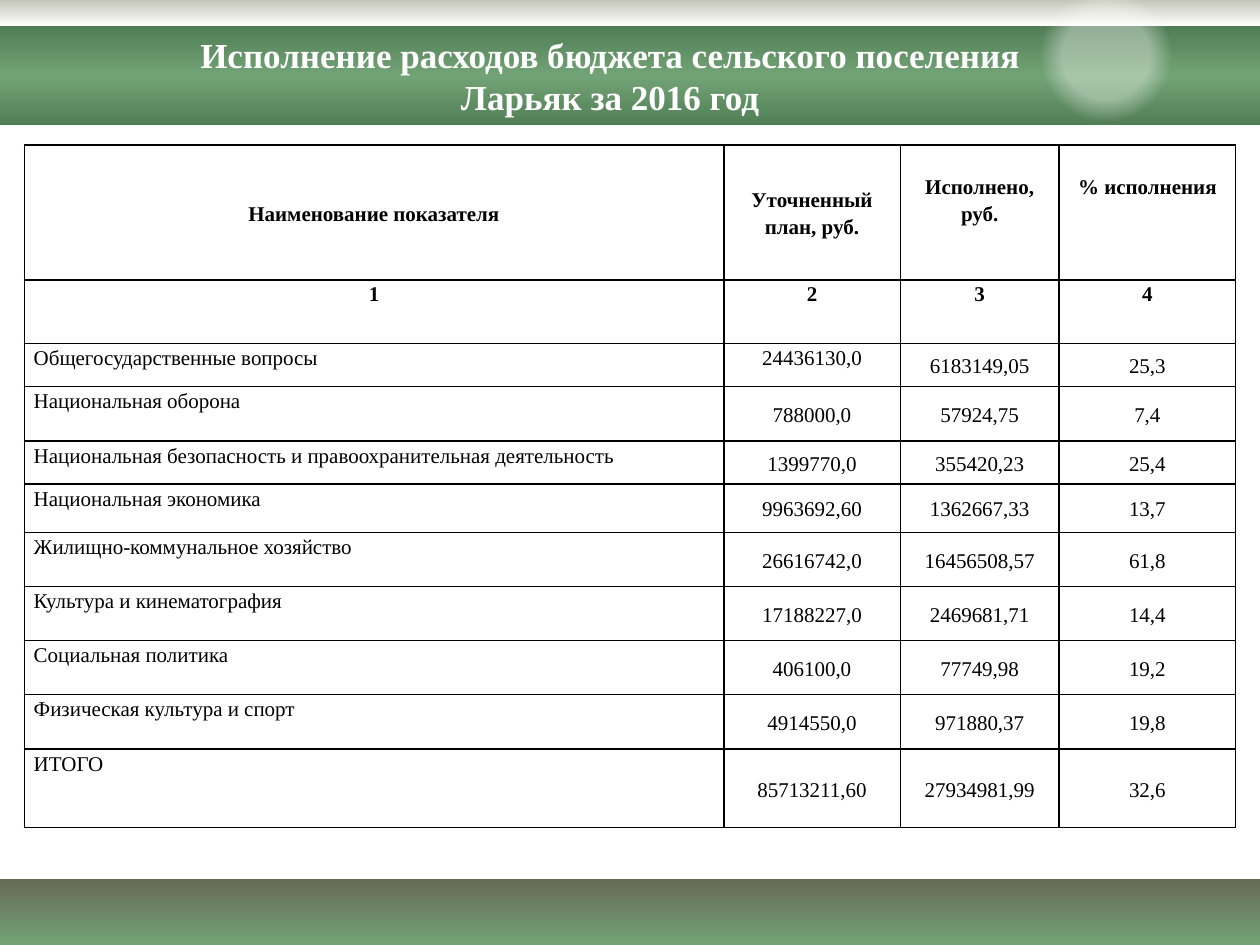
from pptx import Presentation
from pptx.dml.color import RGBColor
from pptx.enum.shapes import MSO_SHAPE
from pptx.enum.text import MSO_ANCHOR, PP_ALIGN
from pptx.oxml import parse_xml
from pptx.oxml.ns import nsdecls, qn
from pptx.util import Cm, Pt

FONT = "Times New Roman"
BLACK = RGBColor(0x00, 0x00, 0x00)
WHITE = RGBColor(0xFF, 0xFF, 0xFF)
OLIVE = RGBColor(0x67, 0x6A, 0x55)
GREEN = RGBColor(0x72, 0xA3, 0x76)
DARK_GREEN = RGBColor(0x52, 0x7E, 0x56)
STONE = RGBColor(0xC4, 0xC6, 0xB8)

WIDTH, HEIGHT = 25.4, 19.05
COLUMNS = [14.1, 3.56, 3.2, 3.56]
ROWS = [2.72, 1.28, 0.87, 1.1, 0.87, 0.97, 1.09, 1.09, 1.09, 1.1, 1.58]
DATA = [
    ["Наименование показателя", "Уточненный план, руб.", "Исполнено,\nруб.", "% исполнения"],
    ["1", "2", "3", "4"],
    ["Общегосударственные вопросы", "24436130,0", "6183149,05", "25,3"],
    ["Национальная оборона", "788000,0", "57924,75", "7,4"],
    ["Национальная безопасность и правоохранительная деятельность",
     "1399770,0", "355420,23", "25,4"],
    ["Национальная экономика", "9963692,60", "1362667,33", "13,7"],
    ["Жилищно-коммунальное хозяйство", "26616742,0", "16456508,57", "61,8"],
    ["Культура и кинематография", "17188227,0", "2469681,71", "14,4"],
    ["Социальная политика", "406100,0", "77749,98", "19,2"],
    ["Физическая культура и спорт", "4914550,0", "971880,37", "19,8"],
    ["ИТОГО", "85713211,60", "27934981,99", "32,6"],
]
HEADER_ROWS = 2
# Cells outside the first column that keep their text at the top
TOP_CELLS = {(0, 2), (0, 3), (1, 1), (1, 2), (1, 3), (2, 1)}


def write(tf, text, size=12, color=BLACK, bold=False, align=PP_ALIGN.CENTER, spacing=None):
    for i, line in enumerate(text.split("\n")):
        p = tf.paragraphs[0] if i == 0 else tf.add_paragraph()
        p.alignment = align
        p.line_spacing = spacing
        r = p.add_run()
        r.text = line
        r.font.name, r.font.size, r.font.bold = FONT, Pt(size), bold
        r.font.color.rgb = color


def gradient_shape(s, kind, box, stops, radial=False):
    """Add a borderless shape; stops are (percent, colour, opacity percent)."""
    sp = s.shapes.add_shape(kind, *[Cm(v) for v in box])
    sp.shadow.inherit = False
    sp.line.fill.background()
    sp.fill.gradient()
    gs = "".join(
        f'<a:gs pos="{pos * 1000}"><a:srgbClr val="{color}">'
        f'<a:alpha val="{alpha * 1000}"/></a:srgbClr></a:gs>'
        for pos, color, alpha in stops)
    if radial:
        direction = ('<a:path path="circle"><a:fillToRect l="50000" t="50000" '
                     'r="50000" b="50000"/></a:path>')
    else:
        direction = '<a:lin ang="5400000" scaled="0"/>'
    fill = parse_xml(f'<a:gradFill {nsdecls("a")} rotWithShape="1">'
                     f'<a:gsLst>{gs}</a:gsLst>{direction}</a:gradFill>')
    spPr = sp.element.spPr
    spPr.replace(spPr.find(qn("a:gradFill")), fill)


def add_header(s, x, y, w, h):
    # Light strip, green band and glow
    strip = 0.53
    gradient_shape(s, MSO_SHAPE.RECTANGLE, (x, y, w, strip),
                   [(0, STONE, 100), (100, WHITE, 100)])
    gradient_shape(s, MSO_SHAPE.RECTANGLE, (x, y + strip, w, h - strip),
                   [(0, DARK_GREEN, 100), (50, GREEN, 100), (100, DARK_GREEN, 100)])
    gradient_shape(s, MSO_SHAPE.OVAL, (x + 20.9, y - 0.28, 2.8, 2.8),
                   [(44, WHITE, 38), (67, WHITE, 0)], radial=True)
    # Title, brought in front of the band
    title = s.shapes.title
    s.shapes.element.append(title.element)
    title.left, title.top = Cm(x + 3.3), Cm(y + strip)
    title.width, title.height = Cm(18), Cm(1.97)
    tf = title.text_frame
    tf.word_wrap = True
    tf.vertical_anchor = MSO_ANCHOR.MIDDLE
    write(tf, "Исполнение расходов бюджета сельского поселения Ларьяк за 2016 год",
          size=20, color=WHITE, bold=True)


def add_borders(cell):
    tcPr = cell._tc.get_or_add_tcPr()
    for i, side in enumerate(("lnL", "lnR", "lnT", "lnB")):
        tcPr.insert(i, parse_xml(
            f'<a:{side} {nsdecls("a")} w="12700"><a:solidFill>'
            f'<a:srgbClr val="{BLACK}"/></a:solidFill></a:{side}>'))


def add_budget_table(s, x, y, w, h):
    table = s.shapes.add_table(len(ROWS), len(COLUMNS), Cm(x), Cm(y), Cm(w), Cm(h)).table
    table.first_row = table.horz_banding = False
    for column, width in zip(table.columns, COLUMNS):
        column.width = Cm(width)
    for row, height in zip(table.rows, ROWS):
        row.height = Cm(height)
    for i, values in enumerate(DATA):
        header = i < HEADER_ROWS
        for j, text in enumerate(values):
            cell = table.cell(i, j)
            cell.fill.background()
            cell.margin_left = cell.margin_right = Cm(0.19)
            cell.margin_top = cell.margin_bottom = 0
            at_top = (i, j) in TOP_CELLS or (j == 0 and i > 0)
            cell.vertical_anchor = MSO_ANCHOR.TOP if at_top else MSO_ANCHOR.MIDDLE
            if i == 0 and at_top:
                cell.margin_top = Cm(0.55)
            write(cell.text_frame, text, bold=header, spacing=1.15,
                  align=PP_ALIGN.CENTER if header or j else PP_ALIGN.LEFT)
            add_borders(cell)


def add_footer(s, x, y, w, h):
    gradient_shape(s, MSO_SHAPE.RECTANGLE, (x, y, w, h),
                   [(0, OLIVE, 100), (100, GREEN, 100)])


def main():
    prs = Presentation()
    prs.slide_width, prs.slide_height = Cm(WIDTH), Cm(HEIGHT)
    s = prs.slides.add_slide(prs.slide_layouts[5])
    add_footer(s, 0, 17.72, WIDTH, HEIGHT - 17.72)
    add_header(s, 0, 0, WIDTH, 2.53)
    add_budget_table(s, 0.49, 2.92, sum(COLUMNS), sum(ROWS))
    prs.save("out.pptx")


if __name__ == "__main__":
    main()
